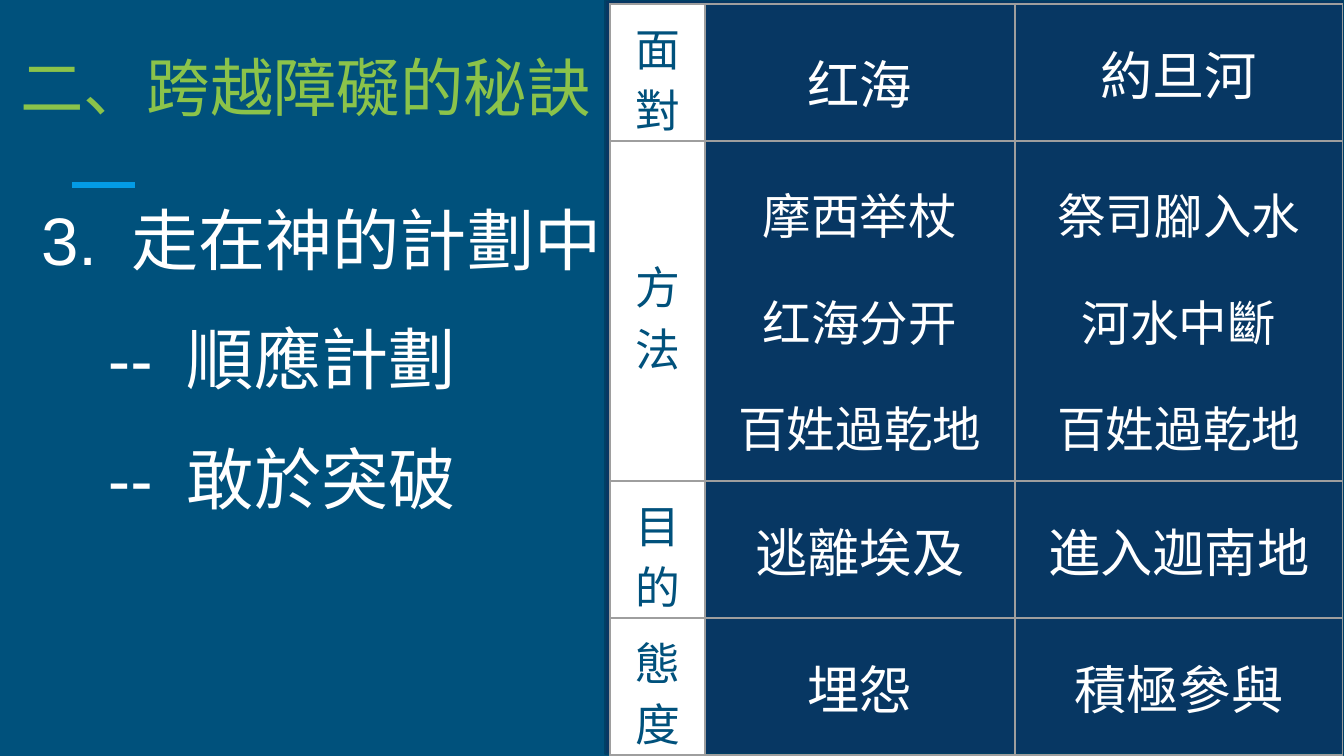
from lxml.etree import SubElement as Sub
from pptx import Presentation
from pptx.dml.color import RGBColor
from pptx.enum.shapes import MSO_CONNECTOR as Link, MSO_SHAPE as Form
from pptx.enum.text import MSO_ANCHOR as Anchor, MSO_AUTO_SIZE as Fit, PP_ALIGN as Align
from pptx.oxml.ns import qn
from pptx.util import Emu, Pt

SCALE = 914400 / 134.4


def px(n):
    return Emu(round(n * SCALE))


def tint(code):
    return RGBColor.from_string(code)


class Deck:
    """Holds the style and the current slide."""

    BACK, NAVY, EDGE, GRID = "00517C", "073763", "004065", "9E9E9E"
    WHITE, GREEN, SKY = "FFFFFF", "8BC34A", "039BE5"
    FACE, CELL, PAD = "Arial", "Calibri", 13

    def __init__(self, wide, high):
        self.file = Presentation()
        self.file.slide_width, self.file.slide_height = px(wide), px(high)
        self.slide = self.file.slides.add_slide(self.file.slide_layouts[1])
        fill = self.slide.background.fill
        fill.solid()
        fill.fore_color.rgb = tint(self.BACK)

    def style(self, para, size, color, face, align, lead=1.0, after=0, before=0):
        font = para.font
        font.size, font.name, font.color.rgb = Pt(size), face, tint(color)
        para.alignment, para.line_spacing = align, lead
        para.space_after, para.space_before = Pt(after), Pt(before)

    def hold(self, shape, box):
        shape.left, shape.top, shape.width, shape.height = map(px, box)
        frame = shape.text_frame
        frame.word_wrap, frame.auto_size = True, Fit.NONE
        frame.vertical_anchor = Anchor.TOP
        frame.margin_left = frame.margin_right = px(self.PAD)
        frame.margin_top = frame.margin_bottom = px(self.PAD)
        return frame

    def title(self, text, box):
        frame = self.hold(self.slide.shapes.title, box)
        frame.text = text
        self.style(frame.paragraphs[0], 34, self.GREEN, self.FACE, Align.JUSTIFY, 1.25, 10)

    def body(self, items, box):
        frame = self.hold(self.slide.placeholders[1], box)
        frame.text = "\n".join(f"{mark}\t{text}" for mark, text, _, _ in items)
        for n, (para, item) in enumerate(zip(frame.paragraphs, items)):
            start, hang = item[2:]
            self.style(para, 36, self.WHITE, self.FACE, Align.JUSTIFY, 1.25, 0, 10 if n else 0)
            prop = para._p.get_or_add_pPr()
            prop.set("marL", str(px(start + hang)))
            prop.set("indent", str(-px(hang)))
            prop.insert_element_before(prop.makeelement(qn("a:buNone")), "a:tabLst", "a:defRPr")

    def line(self, x1, y1, x2, y2):
        rule = self.slide.shapes.add_connector(Link.STRAIGHT, *map(px, (x1, y1, x2, y2)))
        rule.line.color.rgb, rule.line.width = tint(self.SKY), Pt(3)
        Sub(rule._element.spPr, qn("a:effectLst"))

    def panel(self, *box):
        rect = self.slide.shapes.add_shape(Form.RECTANGLE, *map(px, box))
        rect.shadow.inherit = False
        rect.fill.solid()
        rect.fill.fore_color.rgb = tint(self.NAVY)
        rect.line.color.rgb, rect.line.width = tint(self.EDGE), Pt(0.75)

    def edge(self, cell):
        prop = cell._tc.get_or_add_tcPr()
        for n, side in enumerate(("lnL", "lnR", "lnT", "lnB")):
            line = prop.makeelement(qn(f"a:{side}"), {"w": str(Pt(0.75))})
            prop.insert(n, line)
            Sub(Sub(line, qn("a:solidFill")), qn("a:srgbClr"), val=self.GRID)

    def cell(self, cell, text, size, head, loose):
        cell.text, cell.vertical_anchor = text, Anchor.MIDDLE
        cell.margin_left = cell.margin_right = px(self.PAD)
        cell.margin_top, cell.margin_bottom = px(12 if head else self.PAD), px(0 if head else self.PAD)
        if head:
            cell.fill.solid()
            cell.fill.fore_color.rgb = tint(self.WHITE)
        else:
            cell.fill.background()
        color = self.BACK if head else self.WHITE
        lead, after = (1.25, 10) if loose else (0.95 if head else 1.0, 0)
        for para in cell.text_frame.paragraphs:
            self.style(para, size, color, self.CELL, Align.CENTER, lead, after)
        self.edge(cell)

    def table(self, left, top, cols, rows, data):
        box = map(px, (left, top, sum(cols), sum(rows)))
        grid = self.slide.shapes.add_table(len(rows), len(cols), *box).table
        for col, wide in zip(grid.columns, cols):
            col.width = px(wide)
        for row, high in zip(grid.rows, rows):
            row.height = px(high)
        for r, line in enumerate(data):
            for c, text in enumerate(line):
                many = "\n" in text
                size = 24 if c == 0 else 26 if many else 28
                self.cell(grid.cell(r, c), text, size, c == 0, many or (r, c) == (0, 1))


def main():
    deck = Deck(1344, 756)
    deck.title("二、跨越障礙的秘訣", (7, 16, 727, 142))
    deck.line(72, 185, 135, 185)
    deck.panel(605, 0, 739, 754)
    deck.table(610, 4, (95, 310, 328), (137, 340, 137, 137), (
        ("面對", "红海", "約旦河"),
        ("方法", "摩西举杖\n红海分开\n百姓過乾地", "祭司腳入水\n河水中斷\n百姓過乾地"),
        ("目的", "逃離埃及", "進入迦南地"),
        ("態度", "埋怨", "積極參與"),
    ))
    deck.body((
        ("3.", "走在神的計劃中", 0, 90),
        ("--", "順應計劃", 67, 79),
        ("--", "敢於突破", 67, 79),
    ), (28, 165, 868, 478))
    deck.file.save("out.pptx")


if __name__ == "__main__":
    main()
